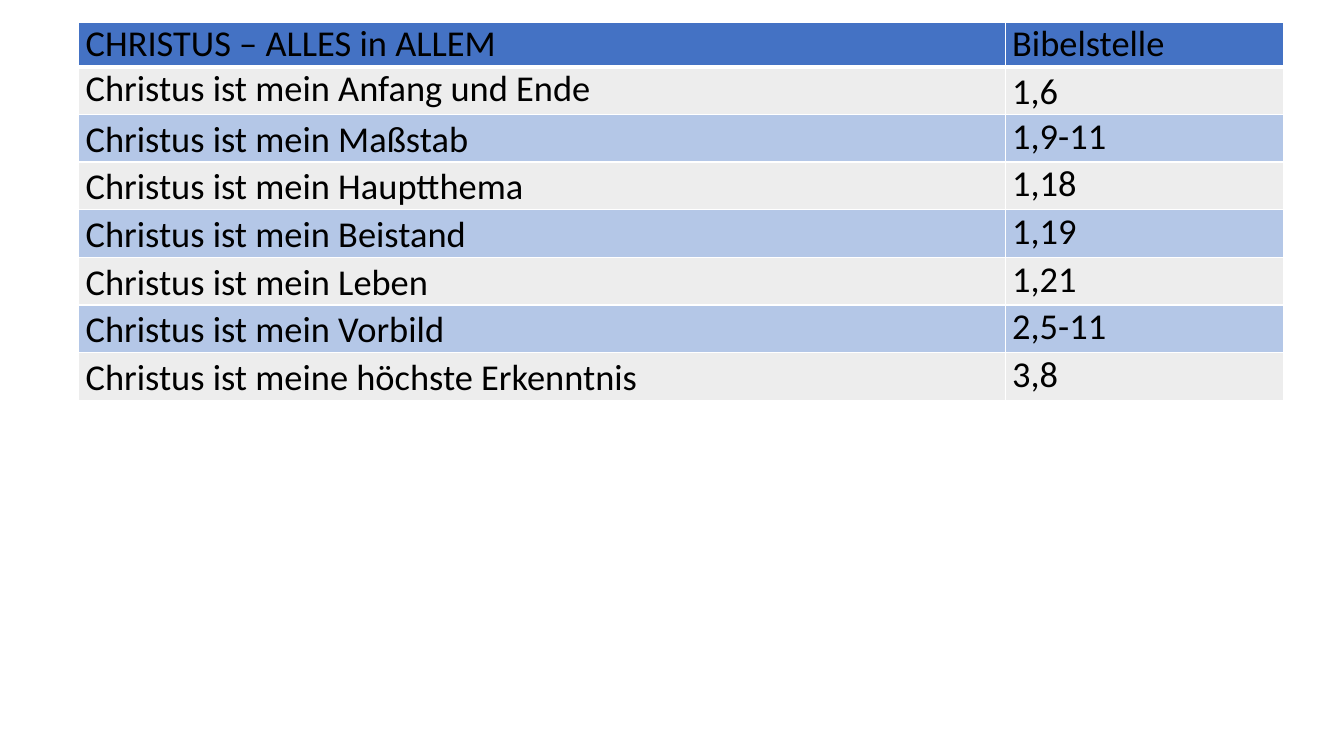
from lxml.etree import SubElement
from pptx import Presentation
from pptx.dml.color import RGBColor
from pptx.oxml.ns import qn
from pptx.util import Inches, Pt

HEADER_BLUE = RGBColor(0x44, 0x72, 0xC4)
ROW_GREY = RGBColor(0xED, 0xED, 0xED)
ROW_BLUE = RGBColor(0xB4, 0xC7, 0xE7)
WHITE = RGBColor(0xFF, 0xFF, 0xFF)
BLACK = RGBColor(0, 0, 0)

HEADER = ("CHRISTUS – ALLES in ALLEM", "Bibelstelle")
VERSES = [
    ("Christus ist mein Anfang und Ende", "1,6"),
    ("Christus ist mein Maßstab", "1,9-11"),
    ("Christus ist mein Hauptthema", "1,18"),
    ("Christus ist mein Beistand", "1,19"),
    ("Christus ist mein Leben", "1,21"),
    ("Christus ist mein Vorbild", "2,5-11"),
    ("Christus ist meine höchste Erkenntnis", "3,8"),
]
COLUMN_WIDTHS = (9.19, 2.76)
HEADER_HEIGHT = 0.41
VERSE_HEIGHT = 0.42
WIDE_SPACING = 1.07


def set_borders(cell, top=1, bottom=1):
    """Draw white borders around a cell, with widths in points."""
    properties = cell._tc.get_or_add_tcPr()
    for side, width in (("L", 1), ("R", 1), ("T", top), ("B", bottom)):
        border = SubElement(properties, qn(f"a:ln{side}"), w=str(Pt(width)))
        fill = SubElement(border, qn("a:solidFill"))
        SubElement(fill, qn("a:srgbClr"), val=str(WHITE))


def fill_cell(cell, text, background, spacing=None):
    """Write the text of a cell and colour its background."""
    cell.margin_left = cell.margin_right = Inches(0.07)
    cell.margin_top = cell.margin_bottom = 0
    cell.fill.solid()
    cell.fill.fore_color.rgb = background
    paragraph = cell.text_frame.paragraphs[0]
    paragraph.text = text
    if spacing:
        paragraph.line_spacing = spacing
    font = paragraph.runs[0].font
    font.name = "Calibri"
    font.size = Pt(26)
    font.bold = False
    font.color.rgb = BLACK


def add_verse_table(slide):
    """Add the table of statements and their Bible references."""
    height = HEADER_HEIGHT + VERSE_HEIGHT * len(VERSES)
    table = slide.shapes.add_table(
        len(VERSES) + 1, len(HEADER), Inches(0.78), Inches(0.22),
        Inches(sum(COLUMN_WIDTHS)), Inches(height)).table
    for column, width in zip(table.columns, COLUMN_WIDTHS):
        column.width = Inches(width)
    for row in table.rows:
        row.height = Inches(VERSE_HEIGHT)
    table.rows[0].height = Inches(HEADER_HEIGHT)

    for column, heading in enumerate(HEADER):
        cell = table.cell(0, column)
        set_borders(cell, bottom=3)
        fill_cell(cell, heading, HEADER_BLUE)
    for row, verse in enumerate(VERSES, start=1):
        background = ROW_GREY if row % 2 else ROW_BLUE
        wide_column = 1 if row == 1 else 0
        for column, text in enumerate(verse):
            cell = table.cell(row, column)
            set_borders(cell, top=3 if row == 1 else 1)
            fill_cell(cell, text, background,
                      WIDE_SPACING if column == wide_column else None)


def main():
    """Build the slide and save it."""
    presentation = Presentation()
    presentation.slide_width = Inches(13.33)
    presentation.slide_height = Inches(7.5)
    slide = presentation.slides.add_slide(presentation.slide_layouts[6])
    add_verse_table(slide)
    presentation.save("out.pptx")


if __name__ == "__main__":
    main()
